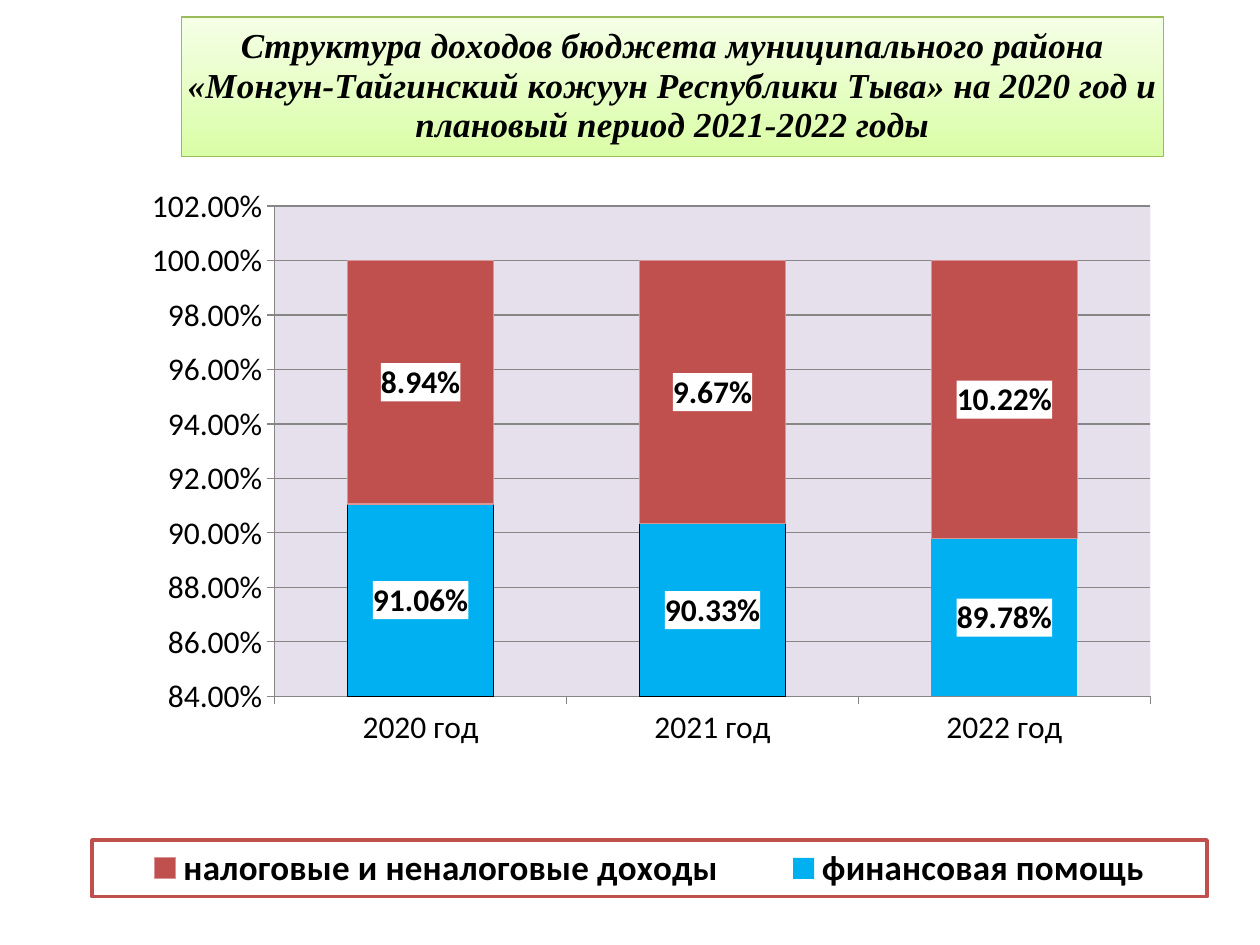
import pptx
import pptx.util
import pptx.oxml
import pptx.oxml.ns
import pptx.chart.data
import pptx.dml.color
import pptx.enum.chart

Pt = pptx.util.Pt
RGB = pptx.dml.color.RGBColor
enum = pptx.enum.chart
qn = pptx.oxml.ns.qn

# Content
TITLE = ("Структура доходов бюджета муниципального района "
         "«Монгун-Тайгинский кожуун Республики Тыва» на 2020 год "
         "и плановый период 2021-2022 годы")
YEARS = ["2020 год", "2021 год", "2022 год"]
AID = ("финансовая помощь", (0.9106, 0.9033, 0.8978))
TAX = ("налоговые и неналоговые доходы", (0.0894, 0.0967, 0.1022))
FORMAT = "0.00%"

# Colours
BLACK = RGB(0x00, 0x00, 0x00)
WHITE = RGB(0xFF, 0xFF, 0xFF)
BLUE = RGB(0x00, 0xB0, 0xF0)
RED = RGB(0xC0, 0x50, 0x4D)
PINK = RGB(0xD9, 0x96, 0x94)
LILAC = RGB(0xE6, 0xE0, 0xEC)
GREY = RGB(0x86, 0x86, 0x86)
GREEN = RGB(0x9B, 0xBB, 0x59)
LIGHT = RGB(0xF5, 0xFF, 0xE6)
LIME = RGB(0xDA, 0xFD, 0xA7)

NS = 'xmlns:c="%s" xmlns:a="%s"' % (
    "http://schemas.openxmlformats.org/drawingml/2006/chart",
    "http://schemas.openxmlformats.org/drawingml/2006/main")


def layout(x, y, w=None, h=None, inner=False):
    """Manual place of a chart part, in fractions of the chart."""
    tags = [("xMode", "edge"), ("yMode", "edge"), ("x", x), ("y", y)]
    if inner:
        tags.insert(0, ("layoutTarget", "inner"))
    if w:
        tags += [("w", w), ("h", h)]
    body = "".join('<c:%s val="%s"/>' % tag for tag in tags)
    return pptx.oxml.parse_xml(
        f"<c:layout {NS}><c:manualLayout>{body}</c:manualLayout></c:layout>")


def box(fill, line=None, width=0):
    """Fill and outline of a chart part."""
    edge = "<a:noFill/>"
    if line:
        edge = f'<a:solidFill><a:srgbClr val="{line}"/></a:solidFill>'
    return pptx.oxml.parse_xml(
        f'<c:spPr {NS}><a:solidFill><a:srgbClr val="{fill}"/></a:solidFill>'
        f'<a:ln w="{int(Pt(width))}">{edge}</a:ln></c:spPr>')


def place(part, spot):
    """Put a layout just before the overlay flag of a title or legend."""
    for old in part.findall(qn("c:layout")):
        part.remove(old)
    part.find(qn("c:overlay")).addprevious(spot)


def style(font, size, bold=False, name="Calibri"):
    font.size, font.bold, font.name = Pt(size), bold, name
    font.color.rgb = BLACK


def stroke(line, color, width=0.75):
    line.color.rgb = color
    line.width = Pt(width)


# Slide and chart
deck = pptx.Presentation()
deck.slide_width, deck.slide_height = Pt(720), Pt(540)
slide = deck.slides.add_slide(deck.slide_layouts[6])
data = pptx.chart.data.CategoryChartData(number_format=FORMAT)
data.categories = YEARS
for name, vals in (AID, TAX):
    data.add_series(name, vals)
chart = slide.shapes.add_chart(
    enum.XL_CHART_TYPE.COLUMN_STACKED, 0, 0, Pt(720), Pt(540), data).chart
style(chart.font, 18)

# Title
chart.has_title = True
title = chart.chart_title
title.include_in_layout = False
title.text_frame.text = TITLE
font = title.text_frame.paragraphs[0].runs[0].font
style(font, 20, True, "Times New Roman")
font.italic = True
fill = title.format.fill
fill.gradient()
fill.gradient_angle = 270
for stop, color in zip(fill.gradient_stops, (LIGHT, LIME)):
    stop.color.rgb = color
stroke(title.format.line, GREEN)
place(title._element, layout(0.144, 0.018))

# Plot area
plot = chart.plots[0]
plot.gap_width, plot.overlap = 100, 100
plot.vary_by_categories = False
area = chart._chartSpace.chart.plotArea
for old in area.findall(qn("c:layout")):
    area.remove(old)
area.insert(0, layout(0.218, 0.218, 0.695, 0.519, inner=True))
area.append(box(LILAC))

# Axes
values = chart.value_axis
values.minimum_scale, values.maximum_scale = 0.84, 1.02
values.major_unit = 0.02
values.has_major_gridlines = True
stroke(values.major_gridlines.format.line, GREY)
values.tick_labels.number_format = FORMAT
values.tick_labels.number_format_is_linked = False
for axis in (values, chart.category_axis):
    axis.major_tick_mark = enum.XL_TICK_MARK.OUTSIDE
    stroke(axis.format.line, GREY)
    style(axis.tick_labels.font, 18)

# Series and labels
aid, tax = plot.series
for series, color in ((aid, BLUE), (tax, RED)):
    series.format.fill.solid()
    series.format.fill.fore_color.rgb = color
    labels = series.data_labels
    labels.show_value = True
    labels.number_format = FORMAT
    labels.number_format_is_linked = False
    style(labels.font, 18, True)
    labels._element.find(qn("c:txPr")).addprevious(box(WHITE))
stroke(tax.format.line, PINK)
aid.format.line.fill.background()
for i in (0, 1):
    form = aid.points[i].format
    form.fill.solid()
    form.fill.fore_color.rgb = BLUE
    stroke(form.line, BLACK)

# Legend
chart.has_legend = True
legend = chart.legend
legend.position = enum.XL_LEGEND_POSITION.RIGHT
legend.include_in_layout = False
style(legend.font, 20, True)
place(legend._element, layout(0.073, 0.889, 0.885, 0.06))
legend._element.find(qn("c:overlay")).addnext(box(WHITE, RED, 2))

deck.save("out.pptx")
